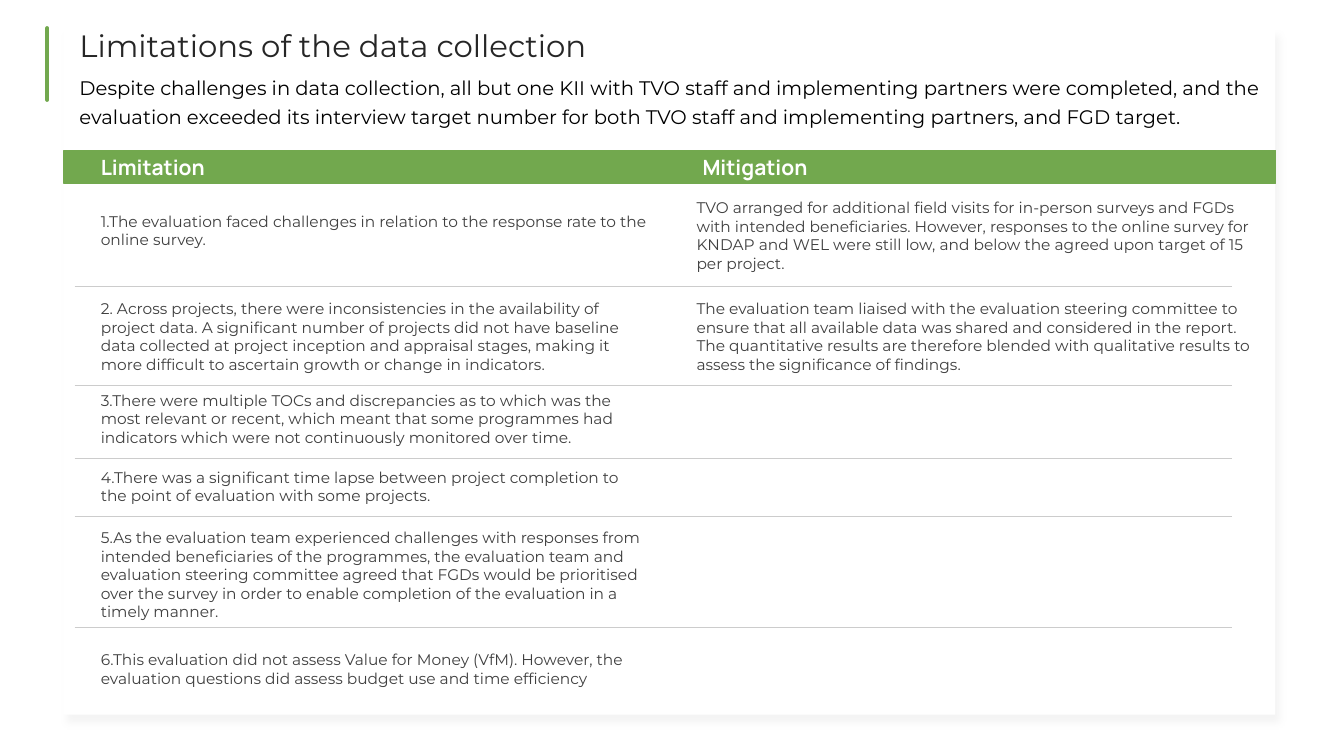
from lxml.etree import SubElement
from pptx import Presentation
from pptx.dml.color import RGBColor
from pptx.enum.shapes import MSO_CONNECTOR, MSO_SHAPE
from pptx.enum.text import MSO_ANCHOR, MSO_AUTO_SIZE
from pptx.oxml.ns import qn
from pptx.util import Pt

GREEN, WHITE, GREY = "72A84E", "FFFFFF", "CCCCCC"
LEFT_COLUMN, RIGHT_COLUMN = 62.64, 488.16
CELL_FORMAT = {"size": Pt(11), "name": "Montserrat"}
HEADER_FORMAT = {"size": Pt(15), "name": "Manrope", "bold": True}

# left, top, width, height, text
CELLS = [
    (LEFT_COLUMN, 141.84, 416.88, 23.76,
     "1.The evaluation faced challenges in relation to the response rate to the online survey."),
    (RIGHT_COLUMN, 132.48, 416.88, 54.72,
     "TVO arranged for additional field visits for in-person surveys and FGDs with intended "
     "beneficiaries. However, responses to the online survey for KNDAP and WEL were still low, "
     "and below the agreed upon target of 15 per project."),
    (LEFT_COLUMN, 204.48, 408.96, 34.56,
     "2. Across projects, there were inconsistencies in the availability of project data. "
     "A significant number of projects did not have baseline data collected at project inception "
     "and appraisal stages, making it more difficult to ascertain growth or change in indicators."),
    (RIGHT_COLUMN, 204.48, 416.88, 44.64,
     "The evaluation team liaised with the evaluation steering committee to ensure that all "
     "available data was shared and considered in the report. The quantitative results are "
     "therefore blended with qualitative results to assess the significance of findings."),
    (LEFT_COLUMN, 270, 400.32, 34.56,
     "3.There were multiple TOCs and discrepancies as to which was the most relevant or recent, "
     "which meant that some programmes had indicators which were not continuously monitored "
     "over time."),
    (LEFT_COLUMN, 324.72, 400.32, 23.76,
     "4.There was a significant time lapse between project completion to the point of evaluation "
     "with some projects."),
    (LEFT_COLUMN, 367.92, 408.96, 34.56,
     "5.As the evaluation team experienced challenges with responses from intended beneficiaries "
     "of the programmes, the evaluation team and evaluation steering committee agreed that FGDs "
     "would be prioritised over the survey in order to enable completion of the evaluation in a "
     "timely manner."),
    (LEFT_COLUMN, 455.04, 400.32, 29.52,
     "6.This evaluation did not assess Value for Money (VfM). However, the evaluation questions "
     "did assess budget use and time efficiency"),
]
DIVIDER_TOPS = [204.48, 275.04, 327.6, 368.64, 448.56]


def colour(value):
    return RGBColor.from_string(value)


def add_rectangle(page, left, top, width, height, fill, line=None):
    box = page.shapes.add_shape(MSO_SHAPE.RECTANGLE, Pt(left), Pt(top), Pt(width), Pt(height))
    box.shadow.inherit = False
    box.fill.solid()
    box.fill.fore_color.rgb = colour(fill)
    if line:
        box.line.color.rgb = colour(line)
        box.line.width = Pt(0.75)
    else:
        box.line.fill.background()
    return box


def add_soft_shadow(box):
    """Fill the empty effect list with a faint shadow to the lower right."""
    effects = box._element.spPr.find(qn("a:effectLst"))
    shadow = SubElement(effects, qn("a:outerShdw"), blurRad=str(Pt(4.5)), dist=str(Pt(6.8)),
                        dir=str(60 * 60000), algn="bl", rotWithShape="0")
    tint = SubElement(shadow, qn("a:srgbClr"), val="B7B7B7")
    SubElement(tint, qn("a:alpha"), val="15000")


def add_line(page, start, end, tint, width):
    line = page.shapes.add_connector(MSO_CONNECTOR.STRAIGHT, *map(Pt, start + end))
    line.line.color.rgb = colour(tint)
    line.line.width = Pt(width)
    SubElement(line._element.spPr, qn("a:effectLst"))
    return line


def add_text(page, left, top, width, height, text, tint, font_format, inset=9.36):
    box = page.shapes.add_textbox(Pt(left), Pt(top), Pt(width), Pt(height))
    frame = box.text_frame
    frame_format = {"word_wrap": True, "auto_size": MSO_AUTO_SIZE.NONE,
                    "vertical_anchor": MSO_ANCHOR.TOP}
    for side in ("left", "top", "right", "bottom"):
        frame_format[f"margin_{side}"] = Pt(inset)
    for name, value in frame_format.items():
        setattr(frame, name, value)
    para = frame.paragraphs[0]
    span = para.add_run()
    span.text = text
    span.font.color.rgb = colour(tint)
    for name, value in font_format.items():
        setattr(span.font, name, value)
    return para


def add_heading(page, top, width, height, text, tint, size):
    para = add_text(page, 42.48, top, width, height, text, tint,
                    {"size": Pt(size), "name": "Montserrat"}, inset=7.2)
    para._p.get_or_add_pPr().set("marL", str(Pt(7.2)))
    return para


def main():
    deck = Presentation()
    deck.slide_width, deck.slide_height = Pt(960), Pt(540)
    page = deck.slides.add_slide(deck.slide_layouts[6])

    accent = add_line(page, (33.84, 20.16), (33.84, 71.28), GREEN, 3)
    accent.line._get_or_add_ln().set("cap", "rnd")
    add_soft_shadow(add_rectangle(page, 45.36, 20.16, 865.44, 490.32, WHITE))
    add_rectangle(page, 45.72, 107.28, 865.44, 23.76, GREEN, GREEN)

    for left, label in ((LEFT_COLUMN, "Limitation"), (492.48, "Mitigation")):
        add_text(page, left, 100.8, 146.88, 27.36, label, WHITE, HEADER_FORMAT)
    for top in DIVIDER_TOPS:
        add_line(page, (53.28, top), (879.84, top), GREY, 0.75)
    for left, top, width, height, text in CELLS:
        add_text(page, left, top, width, height, text, "3F3F3F", CELL_FORMAT)

    add_heading(page, 12.24, 457.92, 41.04, "Limitations of the data collection", "262626", 22)
    summary = add_heading(
        page, 43.92, 869.04, 51.84,
        "Despite challenges in data collection, all but one KII with TVO staff and implementing "
        "partners were completed, and the evaluation exceeded its interview target number for "
        "both TVO staff and implementing partners, and FGD target.", "000000", 14)
    summary.line_spacing = 1.2
    deck.save("out.pptx")


if __name__ == "__main__":
    main()
